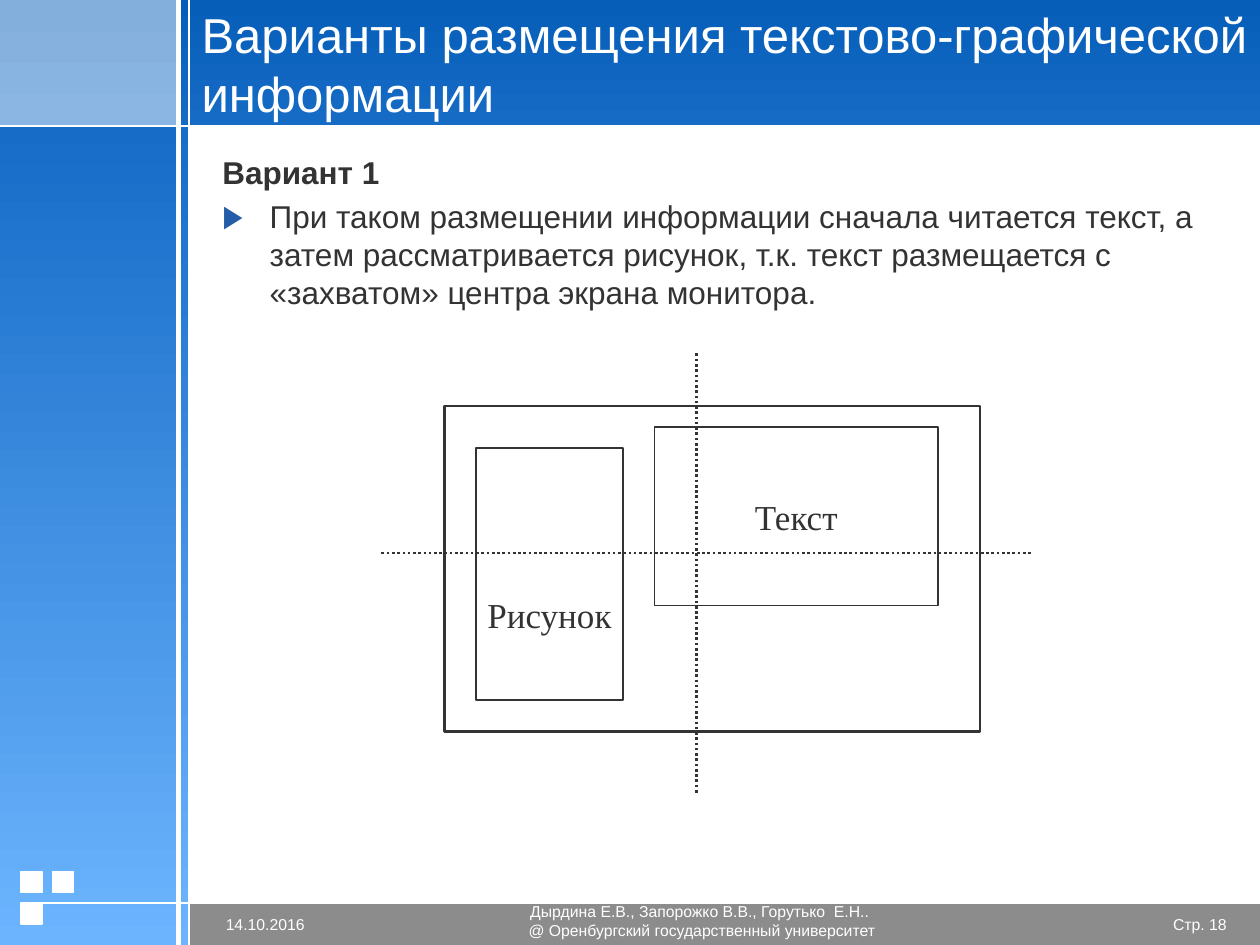
import dataclasses

import lxml.etree
import pptx
import pptx.dml.color
import pptx.enum.dml
import pptx.enum.shapes
import pptx.enum.text
import pptx.oxml.ns
import pptx.util

Pt = pptx.util.Pt
ALIGN = pptx.enum.text.PP_ALIGN
ANCHOR = pptx.enum.text.MSO_ANCHOR


@dataclasses.dataclass(frozen=True)
class Theme:
    white: str = "FFFFFF"
    ink: str = "333333"
    backdrop: str = "BDE0FF"
    footer_band: str = "8C8C8C"
    bullet: str = "245CA8"
    corner: tuple = ("83AFDC", "8BB6E3")
    sidebar: tuple = ("166CC7", "6CB4FE")
    header: tuple = ("065EB8", "166BC5")
    font: str = "Arial"
    diagram_font: str = "Times New Roman"
    title_size: int = 28
    diagram_size: int = 20
    body_size: int = 18
    footer_size: int = 9


THEME = Theme()

# Page grid, in points
PAGE_W, PAGE_H = 720, 540
SIDEBAR_W, STRIPE_X = 108, 102
HEADER_H, FOOTER_Y = 72, 516


def rgb(value):
    return pptx.dml.color.RGBColor.from_string(value)


def add_child(parent, tag, **attributes):
    return lxml.etree.SubElement(parent, pptx.oxml.ns.qn(tag), attributes)


def add_box(slide, left, top, width, height, fill=None, line=None, weight=0.75):
    """Rectangle; fill is a colour, a pair of gradient colours or None."""
    box = slide.shapes.add_shape(pptx.enum.shapes.MSO_SHAPE.RECTANGLE,
                                 Pt(left), Pt(top), Pt(width), Pt(height))
    box.shadow.inherit = False
    if fill is None:
        box.fill.background()
    elif isinstance(fill, tuple):
        box.fill.gradient()
        box.fill.gradient_angle = 270
        for stop, position, color in zip(box.fill.gradient_stops, (0, 1), fill):
            stop.position = position
            stop.color.rgb = rgb(color)
    else:
        box.fill.solid()
        box.fill.fore_color.rgb = rgb(fill)
    if line:
        box.line.color.rgb = rgb(line)
        box.line.width = Pt(weight)
    else:
        box.line.fill.background()
    return box


def add_line(slide, start, end, color, weight, dash=None):
    line = slide.shapes.add_connector(pptx.enum.shapes.MSO_CONNECTOR.STRAIGHT,
                                      *map(Pt, start + end))
    line.line.color.rgb = rgb(color)
    line.line.width = Pt(weight)
    if dash:
        line.line.dash_style = dash
    add_child(line._element.spPr, "a:effectLst")


def write(shape, *paragraphs, size, color=THEME.ink, font=THEME.font,
          align=ALIGN.LEFT, anchor=ANCHOR.MIDDLE, wrap=True,
          insets=(7.2, 3.6, 7.2, 3.6), before=0):
    """Fill a shape with text and return its paragraphs."""
    frame = shape.text_frame
    frame.word_wrap = wrap
    frame.auto_size = pptx.enum.text.MSO_AUTO_SIZE.NONE
    frame.vertical_anchor = anchor
    (frame.margin_left, frame.margin_top,
     frame.margin_right, frame.margin_bottom) = map(Pt, insets)
    frame.text = "\n".join(paragraphs)
    for paragraph in frame.paragraphs:
        paragraph.alignment = align
        paragraph.space_before = Pt(before)
        for run in paragraph.runs:
            run.font.size = Pt(size)
            run.font.name = font
            run.font.color.rgb = rgb(color)
    return frame.paragraphs


def add_text(slide, left, top, width, height, *paragraphs, **text_format):
    box = slide.shapes.add_textbox(Pt(left), Pt(top), Pt(width), Pt(height))
    return write(box, *paragraphs, **text_format)


def set_bullet(paragraph, char, color, indent):
    properties = paragraph._p.get_or_add_pPr()
    properties.set("marL", str(Pt(indent)))
    properties.set("indent", str(-Pt(indent)))
    add_child(add_child(properties, "a:buClr"), "a:srgbClr", val=color)
    add_child(properties, "a:buFont", typeface=THEME.font)
    add_child(properties, "a:buChar", char=char)


def add_frame(slide):
    # Coloured areas
    add_box(slide, SIDEBAR_W, HEADER_H, PAGE_W - SIDEBAR_W,
            FOOTER_Y - HEADER_H, THEME.white)
    add_box(slide, SIDEBAR_W, FOOTER_Y, PAGE_W - SIDEBAR_W,
            PAGE_H - FOOTER_Y, THEME.footer_band)
    add_box(slide, 0, 0, SIDEBAR_W, HEADER_H, THEME.corner)
    add_box(slide, 0, HEADER_H, SIDEBAR_W, PAGE_H - HEADER_H, THEME.sidebar)
    add_box(slide, STRIPE_X, 0, PAGE_W - STRIPE_X, HEADER_H, THEME.header)

    # Small squares in the corner
    square, step = 12, 18
    for column, row in ((0, 1), (0, 0), (1, 0)):
        add_box(slide, 12 + column * step, FOOTER_Y + (row - 1) * step,
                square, square, THEME.white, THEME.white)

    # White rules
    for start, end, weight in (
            ((SIDEBAR_W, 0), (SIDEBAR_W, PAGE_H), 1),
            ((STRIPE_X, 0), (STRIPE_X, PAGE_H), 3),
            ((PAGE_W, HEADER_H), (0, HEADER_H), 1),
            ((PAGE_W, FOOTER_Y), (12, FOOTER_Y), 1)):
        add_line(slide, start, end, THEME.white, weight)


def add_footer(slide):
    footer_format = dict(size=THEME.footer_size, color=THEME.white,
                         insets=(0, 0, 0, 0))
    add_text(slide, 660, 522, 41, 12, "Стр. 18", align=ALIGN.RIGHT, **footer_format)
    add_text(slide, 129, 522, 87, 12, "14.10.2016", **footer_format)
    add_text(slide, 196, 504, 410, 44,
             "Дырдина Е.В., Запорожко В.В., Горутько  Е.Н.. ",
             "@ Оренбургский государственный университет",
             align=ALIGN.CENTER, **footer_format)


def add_title(slide):
    title = slide.shapes.title
    title.left, title.top, title.width, title.height = map(Pt, (108, 6, 642, 60))
    write(title, "Варианты размещения текстово-графической информации",
          size=THEME.title_size, color=THEME.white)
    # Bring the title in front of the header band
    slide.shapes._spTree.append(title._element)


def add_body(slide):
    heading, explanation = add_text(
        slide, 120, 84, 588, 420,
        "Вариант 1",
        "При таком размещении информации сначала читается текст, а затем "
        "рассматривается рисунок, т.к. текст размещается с «захватом» "
        "центра экрана монитора.",
        size=THEME.body_size, anchor=ANCHOR.TOP, before=3.6)
    heading.runs[0].font.bold = True
    set_bullet(explanation, "▶", THEME.bullet, 27)


def add_diagram(slide):
    # Screen with its centre axes
    add_box(slide, 254, 232, 306, 186, line=THEME.ink, weight=1.5)
    center_x, center_y = 398, 316
    dots = pptx.enum.dml.MSO_LINE.ROUND_DOT
    add_line(slide, (center_x, 202), (center_x, 454), THEME.ink, 1.5, dots)
    add_line(slide, (218, center_y), (590, center_y), THEME.ink, 1.5, dots)

    # Picture and text areas; the picture label sits below the middle
    for label, place, top_inset in (
            ("Рисунок", (272, 256, 84, 144), 49.6),
            ("Текст", (374, 244, 162, 102), 3.6)):
        area = add_box(slide, *place, line=THEME.ink)
        write(area, label, size=THEME.diagram_size, font=THEME.diagram_font,
              align=ALIGN.CENTER, wrap=False, insets=(7.2, top_inset, 7.2, 3.6))


def main():
    deck = pptx.Presentation()
    deck.slide_width, deck.slide_height = Pt(PAGE_W), Pt(PAGE_H)
    slide = deck.slides.add_slide(deck.slide_layouts.get_by_name("Title Only"))
    slide.background.fill.solid()
    slide.background.fill.fore_color.rgb = rgb(THEME.backdrop)

    add_frame(slide)
    add_footer(slide)
    add_title(slide)
    add_body(slide)
    add_diagram(slide)
    deck.save("out.pptx")


if __name__ == "__main__":
    main()
